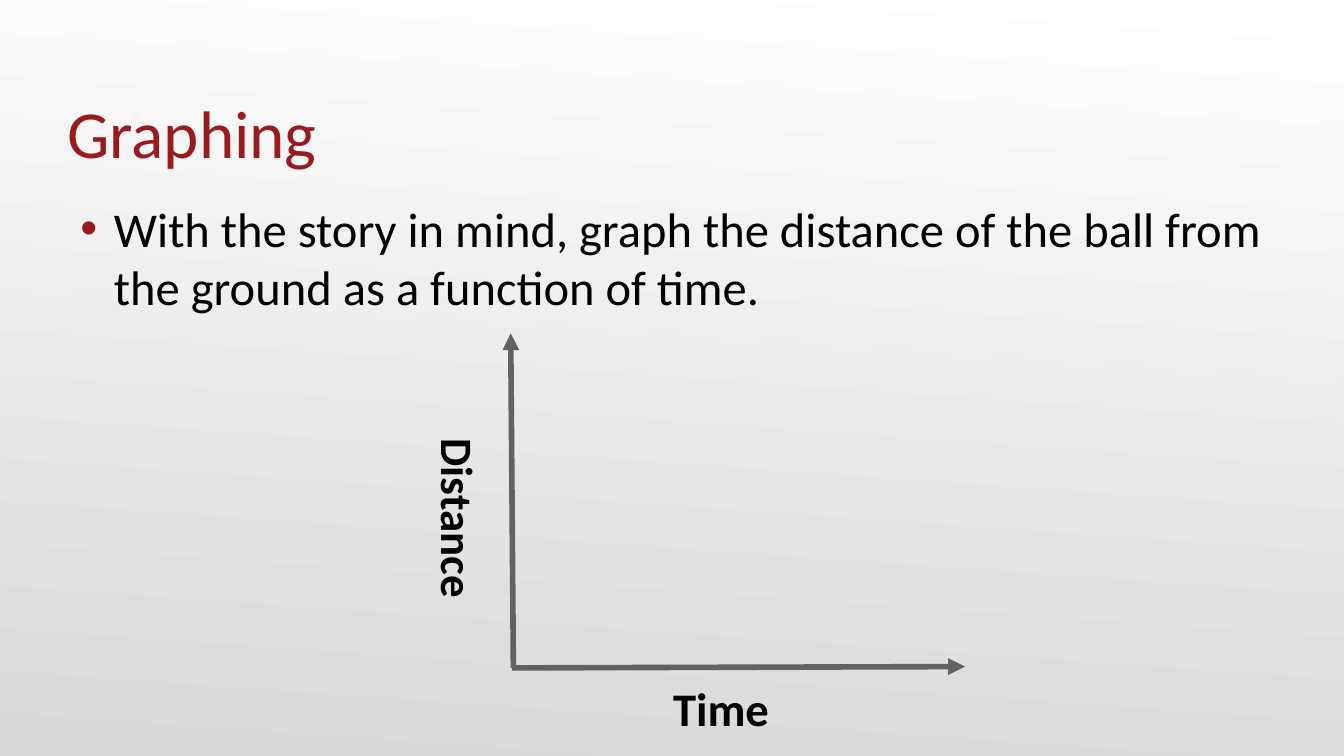
from lxml import etree
from pptx import Presentation
from pptx.dml.color import RGBColor
from pptx.enum.shapes import MSO_CONNECTOR
from pptx.enum.text import MSO_ANCHOR, MSO_AUTO_SIZE, PP_ALIGN
from pptx.oxml.ns import qn
from pptx.util import Inches, Pt

STRAIGHT = MSO_CONNECTOR.STRAIGHT
TOP, BOTTOM = MSO_ANCHOR.TOP, MSO_ANCHOR.BOTTOM
NO_FIT, GROW = MSO_AUTO_SIZE.NONE, MSO_AUTO_SIZE.SHAPE_TO_FIT_TEXT
LEFT = PP_ALIGN.LEFT

RED = RGBColor(0x99, 0x1B, 0x1E)
BLACK = RGBColor(0, 0, 0)
GRAY = RGBColor(0x62, 0x62, 0x62)
WHITE = RGBColor(0xFF, 0xFF, 0xFF)
SILVER = RGBColor(0xD8, 0xD8, 0xD8)

WIDTH = 10
HEIGHT = WIDTH * 9 / 16

TITLE = "Graphing"
TASK = ("With the story in mind, graph the distance of the ball "
        "from the ground as a function of time.")
# text, box, rotation, size
LABELS = [
    ("Time", (4.91, 4.96, 2.06, 0.62), 0, 25),
    ("Distance", (2.48, 3.79, 1.86, 0.61), 90, 24),
]
# start, end
AXES = [
    ((3.81, 4.97), (7.18, 4.96)),
    ((3.82, 4.97), (3.80, 2.48)),
]


def place(shape, box):
    for name, value in zip(("left", "top", "width", "height"), box):
        setattr(shape, name, Inches(value))


def write(shape, text, margins, font, anchor=TOP, fit=NO_FIT, bullet=None):
    frame = shape.text_frame
    frame.word_wrap = True
    frame.auto_size = fit
    frame.vertical_anchor = anchor
    for side, value in zip(("left", "top", "right", "bottom"), margins):
        setattr(frame, "margin_" + side, Inches(value))
    para = frame.paragraphs[0]
    para.text = text
    para.alignment = LEFT
    if bullet:
        add_bullet(para, bullet)
    style = para.runs[0].font
    style.color.rgb = font["color"]
    for name in ("size", "bold"):
        setattr(style, name, font[name])
    style.name = "Calibri"


def add_bullet(para, color):
    props = para._p.get_or_add_pPr()
    props.set("marL", str(Inches(0.25)))
    props.set("indent", str(Inches(-0.25)))
    tint = etree.SubElement(props, qn("a:buClr"))
    etree.SubElement(tint, qn("a:srgbClr"), val=str(color))
    etree.SubElement(props, qn("a:buFont"), typeface="Arial")
    etree.SubElement(props, qn("a:buChar"), char="•")


def add_axis(slide, start, end):
    points = [Inches(value) for value in start + end]
    axis = slide.shapes.add_connector(STRAIGHT, *points)
    axis.line.color.rgb = GRAY
    axis.line.width = Pt(3)
    etree.SubElement(axis.line._get_or_add_ln(), qn("a:tailEnd"), type="triangle")
    etree.SubElement(axis._element.spPr, qn("a:effectLst"))


def main():
    deck = Presentation()
    deck.slide_width, deck.slide_height = Inches(WIDTH), Inches(HEIGHT)
    slide = deck.slides.add_slide(deck.slide_layouts[5])

    fill = slide.background.fill
    fill.gradient()
    fill.gradient_angle = 360 - 94  # counter-clockwise
    for stop, color in zip(fill.gradient_stops, (WHITE, SILVER)):
        stop.color.rgb = color

    title = slide.shapes.title
    place(title, (0.5, 0.34, 9, 0.94))
    write(title, TITLE, (0, 0.05, 0, 0),
          dict(size=Pt(36), bold=False, color=RED), anchor=BOTTOM)

    task = slide.shapes.add_textbox(0, 0, 0, 0)
    place(task, (0.5, 1.43, 9, 3.76))
    write(task, TASK, (0.1, 0.05, 0.1, 0.05),
          dict(size=Pt(26), bold=False, color=BLACK), bullet=RED)

    for start, end in AXES:
        add_axis(slide, start, end)

    for text, box, turn, size in LABELS:
        label = slide.shapes.add_textbox(0, 0, 0, 0)
        place(label, box)
        label.rotation = turn
        write(label, text, (0.1,) * 4,
              dict(size=Pt(size), bold=True, color=BLACK), fit=GROW)

    deck.save("out.pptx")


if __name__ == "__main__":
    main()
